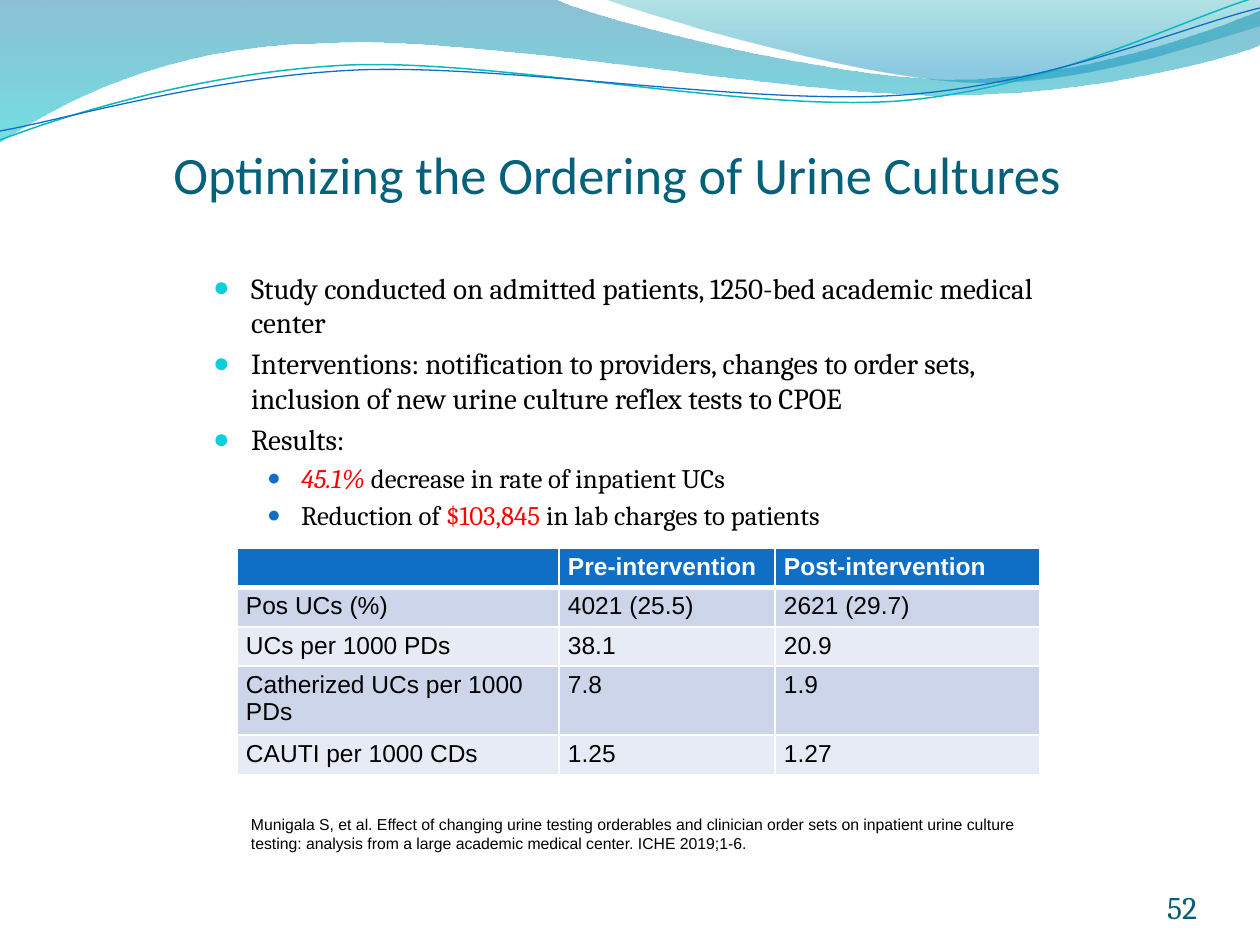
from lxml.etree import SubElement
from pptx import Presentation
from pptx.dml.color import RGBColor
from pptx.enum.text import MSO_ANCHOR, PP_ALIGN
from pptx.oxml.ns import qn
from pptx.util import Pt

PX = 914400 / 126
COLORS = {
    "white": "FFFFFF", "black": "000000", "red": "FF0000", "title": "04617B",
    "number": "045D75", "blue": "0F6FC6", "cyan": "0BD0D9", "teal": "0AB8BF",
    "band_dark": "CCD5EA", "band_light": "E7EBF5",
    "wave_top": "0074A1", "wave_bottom": "00C6CF",
    "crest_top": "00A1A9", "crest_bottom": "008BBF",
}
# Outlines in px: a pair is a straight step, a triple of pairs a Bezier curve.
WAVE = [(0, 0), (554, -1), ((600, 21), (837, 79), (955, 79)),
        ((1075, 79), (1207, 33), (1260, 11)), (1261, 45),
        ((1239, 55), (1096, 96), (940, 95)), ((784, 95), (481, 35), (324, 43)),
        ((163, 45), (58, 105), (-1, 142)), (0, 0)]
CREST = [(604, -1), ((641, 14), (859, 78), (969, 82)),
         ((1079, 87), (1211, 40), (1260, 26)), (1260, 0), (604, -1)]
TEAL_LINE = [(0, 140), ((60, 117), (199, 72), (349, 65)),
             ((498, 59), (747, 112), (898, 101)), ((1050, 89), (1182, 19), (1257, -3))]
BLUE_LINE = [(0, 131), ((59, 121), (207, 77), (357, 70)),
             ((508, 64), (752, 106), (903, 95)), ((1053, 84), (1185, 26), (1260, 8))]
BULLETS = [
    (0, [("Study conducted on admitted patients, 1250-bed academic medical center", "black", False)]),
    (0, [("Interventions: notification to providers, changes to order sets, "
          "inclusion of new urine culture reflex tests to CPOE", "black", False)]),
    (0, [("Results:", "black", False)]),
    (1, [("45.1% ", "red", True), ("decrease in rate of inpatient UCs", "black", False)]),
    (1, [("Reduction of ", "black", False), ("$103,845 ", "red", False),
         ("in lab charges to patients", "black", False)]),
]
# Per level: text size, left margin, hanging indent, bullet colour, bullet size in %
LEVELS = [(16.6, 38, 38, "cyan", 95), (15.3, 88, 34, "blue", 85)]
ROWS = [
    ("", "Pre-intervention", "Post-intervention"),
    ("Pos UCs (%)", "4021 (25.5)", "2621 (29.7)"),
    ("UCs per 1000 PDs", "38.1", "20.9"),
    ("Catherized UCs per 1000 PDs", "7.8", "1.9"),
    ("CAUTI per 1000 CDs", "1.25", "1.27"),
]
TABLE_SIZE = 14


def px(value):
    return round(value * PX)


def color(name):
    return RGBColor.from_string(COLORS[name])


def add_run(paragraph, text, size, font, color_name, bold=False, italic=False):
    run = paragraph.add_run()
    run.text = text
    run.font.size, run.font.name = Pt(size), font
    run.font.color.rgb = color(color_name)
    run.font.bold, run.font.italic = bold, italic


def add_text_frame(slide, box, margins=(12, 6, 12, 6), anchor=MSO_ANCHOR.TOP):
    frame = slide.shapes.add_textbox(*map(px, box)).text_frame
    frame.word_wrap = True
    frame.vertical_anchor = anchor
    (frame.margin_left, frame.margin_top,
     frame.margin_right, frame.margin_bottom) = map(px, margins)
    return frame


def add_outline(slide, outline, closed):
    """Draw through every point, then join each curve's three steps into one Bezier."""
    is_curve = [isinstance(part[0], tuple) for part in outline]
    points = []
    for part, curved in zip(outline, is_curve):
        points.extend(part if curved else [part])
    points = [(px(x), px(y)) for x, y in points]
    builder = slide.shapes.build_freeform(*points[0])
    builder.add_line_segments(points[1:], close=closed)
    shape = builder.convert_to_shape()
    shape.shadow.inherit = False
    steps = iter(list(shape.element.spPr.iter(qn("a:lnTo"))))
    for curved in is_curve[1:]:
        first = next(steps)
        if curved:
            first.tag = qn("a:cubicBezTo")
            for _ in range(2):
                step = next(steps)
                first.append(step[0])
                step.getparent().remove(step)
    return shape


def add_wave(slide, outline, stops):
    shape = add_outline(slide, outline, True)
    shape.line.fill.background()
    shape.fill.gradient()
    shape.fill.gradient_angle = 270
    for stop, (name, position, _) in zip(shape.fill.gradient_stops, stops):
        stop.color.rgb = color(name)
        stop.position = position
    fill_colors = shape.element.spPr.iter(qn("a:srgbClr"))
    for fill_color, (_, _, opacity) in zip(fill_colors, stops):
        SubElement(fill_color, qn("a:alpha"), val=str(opacity * 1000))


def add_header(slide):
    add_wave(slide, WAVE, [("wave_top", 0, 45), ("wave_bottom", 1, 55)])
    add_wave(slide, CREST, [("crest_top", 0, 30), ("crest_bottom", 0.8, 45)])
    for outline, name, width in ((TEAL_LINE, "teal", 0.85), (BLUE_LINE, "blue", 0.75)):
        shape = add_outline(slide, outline, False)
        shape.fill.background()
        shape.line.color.rgb = color(name)
        shape.line.width = Pt(width)


def add_title(slide, box):
    frame = add_text_frame(slide, box, (0, 6, 0, 0), MSO_ANCHOR.BOTTOM)
    paragraph = frame.paragraphs[0]
    paragraph.alignment = PP_ALIGN.CENTER
    add_run(paragraph, "Optimizing the Ordering of Urine Cultures", 30, "Calibri", "title")


def add_bullets(slide, box):
    frame = add_text_frame(slide, box)
    for index, (level, runs) in enumerate(BULLETS):
        paragraph = frame.add_paragraph() if index else frame.paragraphs[0]
        size, margin, hanging, bullet_color, bullet_size = LEVELS[level]
        paragraph.level = level
        paragraph.space_before = Pt(size * 0.2)
        properties = paragraph._p.get_or_add_pPr()
        properties.set("marL", str(px(margin)))
        properties.set("indent", str(-px(hanging)))
        SubElement(SubElement(properties, qn("a:buClr")), qn("a:srgbClr"),
                   val=COLORS[bullet_color])
        SubElement(properties, qn("a:buSzPct"), val=str(bullet_size * 1000))
        SubElement(properties, qn("a:buFont"), typeface="Arial")
        SubElement(properties, qn("a:buChar"), char="●")
        for text, color_name, italic in runs:
            add_run(paragraph, text, size, "Cambria", color_name, italic=italic)


def add_borders(cell, row):
    widths = {"L": 1, "R": 1, "T": 3 if row == 1 else 1, "B": 3 if row == 0 else 1}
    for side, width in widths.items():
        line = SubElement(cell._tc.get_or_add_tcPr(), qn(f"a:ln{side}"), w=str(Pt(width)))
        SubElement(SubElement(line, qn("a:solidFill")), qn("a:srgbClr"), val=COLORS["white"])


def add_results_table(slide, box, column_widths):
    table = slide.shapes.add_table(len(ROWS), len(column_widths), *map(px, box)).table
    for column, width in zip(table.columns, column_widths):
        column.width = px(width)
    for row, values in enumerate(ROWS):
        header = row == 0
        fill = "blue" if header else ("band_light", "band_dark")[row % 2]
        for column, text in enumerate(values):
            cell = table.cell(row, column)
            add_borders(cell, row)
            cell.fill.solid()
            cell.fill.fore_color.rgb = color(fill)
            cell.margin_left = cell.margin_right = px(9)
            cell.margin_top = cell.margin_bottom = px(5)
            paragraph = cell.text_frame.paragraphs[0]
            if text:
                add_run(paragraph, text, TABLE_SIZE, "Arial",
                        "white" if header else "black", bold=header)
            else:
                SubElement(paragraph._p, qn("a:endParaRPr"), sz=str(TABLE_SIZE * 100))


def add_citation(slide, box):
    frame = add_text_frame(slide, box)
    add_run(frame.paragraphs[0],
            "Munigala S, et al. Effect of changing urine testing orderables and clinician order "
            "sets on inpatient urine culture testing: analysis from a large academic medical "
            "center. ICHE 2019;1-6.", 9, "Arial", "black")


def add_slide_number(slide, box):
    paragraph = add_text_frame(slide, box, (0, 0, 0, 0), MSO_ANCHOR.BOTTOM).paragraphs[0]
    paragraph.alignment = PP_ALIGN.RIGHT
    add_run(paragraph, "52", 18, "Cambria", "number")


def main():
    presentation = Presentation()
    presentation.slide_width, presentation.slide_height = px(1260), px(945)
    slide = presentation.slides.add_slide(presentation.slide_layouts[6])
    add_header(slide)
    add_title(slide, (140, 136, 955, 69))
    add_bullets(slide, (201, 264, 851, 272))
    add_slide_number(slide, (1092, 876, 105, 50))
    add_results_table(slide, (237, 548, 803, 190), (322, 216, 265))
    add_citation(slide, (239, 809, 804, 50))
    presentation.save("out.pptx")


if __name__ == "__main__":
    main()
